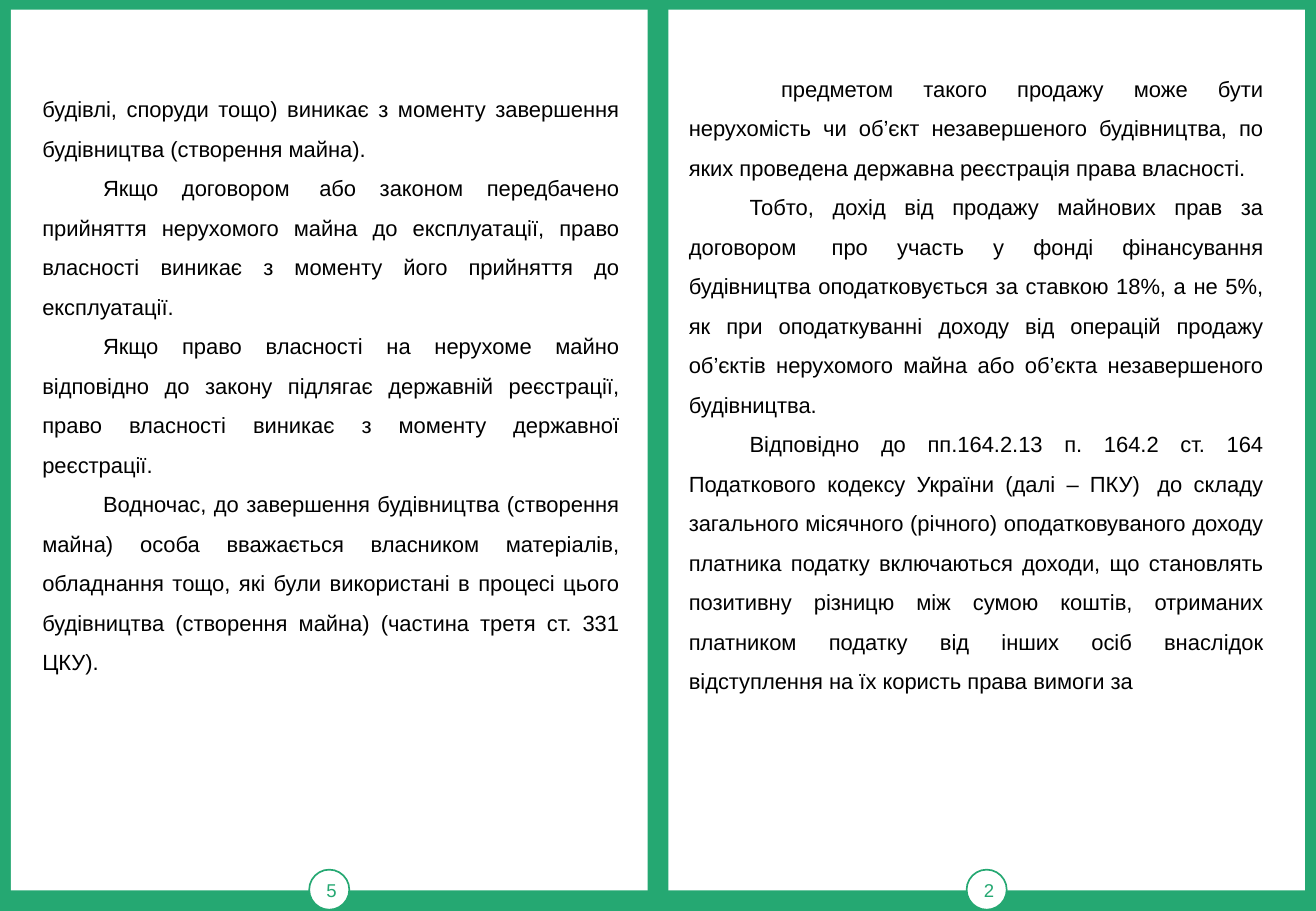
"""Build a two-page booklet spread about property rights and income tax."""
from pptx import Presentation
from pptx.dml.color import RGBColor
from pptx.enum.shapes import MSO_SHAPE
from pptx.enum.text import MSO_ANCHOR, PP_ALIGN
from pptx.util import Inches, Pt

RECTANGLE, OVAL = MSO_SHAPE.RECTANGLE, MSO_SHAPE.OVAL
TOP, MIDDLE = MSO_ANCHOR.TOP, MSO_ANCHOR.MIDDLE
CENTER, JUSTIFY = PP_ALIGN.CENTER, PP_ALIGN.JUSTIFY
COLORS = {"green": "25A872", "paper": "FFFFFF", "ink": "000000"}
FONT = "Arial"
PAGE_TOP, PAGE_WIDTH, PAGE_HEIGHT = 0.08, 5.24, 7.25
BADGE_SIZE, BADGE_TOP = 0.33, 7.16
TAB = 0.5
HARD_SPACE = chr(160)

PAGES = [
    {
        "left": 0.09, "number": "5", "box": (0.25, 0.44, 4.94, 5.6),
        "anchor": MIDDLE, "top_inset": 0.05, "bottom_inset": 0.29,
        "paragraphs": [
            (0, "будівлі, споруди тощо) виникає з моменту завершення будівництва "
                "(створення майна)."),
            (TAB, f"Якщо договором {HARD_SPACE}або законом передбачено прийняття "
                  "нерухомого майна до експлуатації, право власності виникає з моменту "
                  "його прийняття до експлуатації."),
            (TAB, "Якщо право власності на нерухоме майно відповідно до закону підлягає "
                  "державній реєстрації, право власності виникає з моменту державної "
                  "реєстрації."),
            (TAB, "Водночас, до завершення будівництва (створення майна) особа вважається "
                  "власником матеріалів, обладнання тощо, які були використані в процесі "
                  "цього будівництва (створення майна) (частина третя ст. 331 ЦКУ)."),
        ],
    },
    {
        "left": 5.5, "number": "2", "box": (5.57, 0.39, 4.92, 6.74),
        "anchor": TOP, "top_inset": 0.12, "bottom_inset": 0.05,
        "paragraphs": [
            (0.76, "предметом такого продажу може бути нерухомість чи об’єкт "
                   "незавершеного будівництва, по яких проведена державна реєстрація "
                   "права власності."),
            (TAB, f"Тобто, дохід від продажу майнових прав за договором {HARD_SPACE}про "
                  "участь у фонді фінансування будівництва оподатковується за ставкою "
                  "18%, а не 5%, як при оподаткуванні доходу від операцій продажу "
                  "об’єктів нерухомого майна або об’єкта незавершеного будівництва."),
            (TAB, "Відповідно до пп.164.2.13 п. 164.2 ст. 164 Податкового кодексу України "
                  f"(далі – ПКУ){HARD_SPACE} до складу загального місячного (річного) "
                  "оподатковуваного доходу платника податку включаються доходи, що "
                  "становлять позитивну різницю між сумою коштів, отриманих платником "
                  "податку від інших осіб внаслідок відступлення на їх користь права "
                  "вимоги за"),
        ],
    },
]


def add_plain_shape(kind, left, top, width, height):
    shape = slide.shapes.add_shape(
        kind, Inches(left), Inches(top), Inches(width), Inches(height))
    shape.shadow.inherit = False
    shape.fill.solid()
    shape.fill.fore_color.rgb = RGBColor.from_string(COLORS["paper"])
    shape.line.fill.background()
    return shape


def add_text(paragraph, text, size, color, alignment):
    paragraph.alignment = alignment
    run = paragraph.add_run()
    run.text = text
    run.font.name = FONT
    run.font.size = Pt(size)
    run.font.color.rgb = RGBColor.from_string(COLORS[color])


prs = Presentation()
prs.slide_width, prs.slide_height = Inches(10.83), Inches(7.5)
slide = prs.slides.add_slide(prs.slide_layouts[6])
slide.background.fill.solid()
slide.background.fill.fore_color.rgb = RGBColor.from_string(COLORS["green"])

for page in PAGES:
    add_plain_shape(RECTANGLE, page["left"], PAGE_TOP, PAGE_WIDTH, PAGE_HEIGHT)

    badge_left = page["left"] + (PAGE_WIDTH - BADGE_SIZE) / 2
    badge = add_plain_shape(OVAL, badge_left, BADGE_TOP, BADGE_SIZE, BADGE_SIZE)
    badge.line.color.rgb = RGBColor.from_string(COLORS["green"])
    badge.line.width = Pt(1)
    number = badge.text_frame
    number.word_wrap = False
    number.vertical_anchor = MIDDLE
    number.margin_left = Inches(0.04)
    number.margin_right = number.margin_top = number.margin_bottom = 0
    add_text(number.paragraphs[0], page["number"], 11, "green", CENTER)

    body = slide.shapes.add_textbox(*map(Inches, page["box"])).text_frame
    body.word_wrap = True
    body.vertical_anchor = page["anchor"]
    body.margin_top = Inches(page["top_inset"])
    body.margin_bottom = Inches(page["bottom_inset"])
    for index, (indent, text) in enumerate(page["paragraphs"]):
        paragraph = body.add_paragraph() if index else body.paragraphs[0]
        paragraph.line_spacing = 1.5
        paragraph._p.get_or_add_pPr().set("indent", str(Inches(indent)))
        add_text(paragraph, text, 13, "ink", JUSTIFY)

prs.save("out.pptx")
